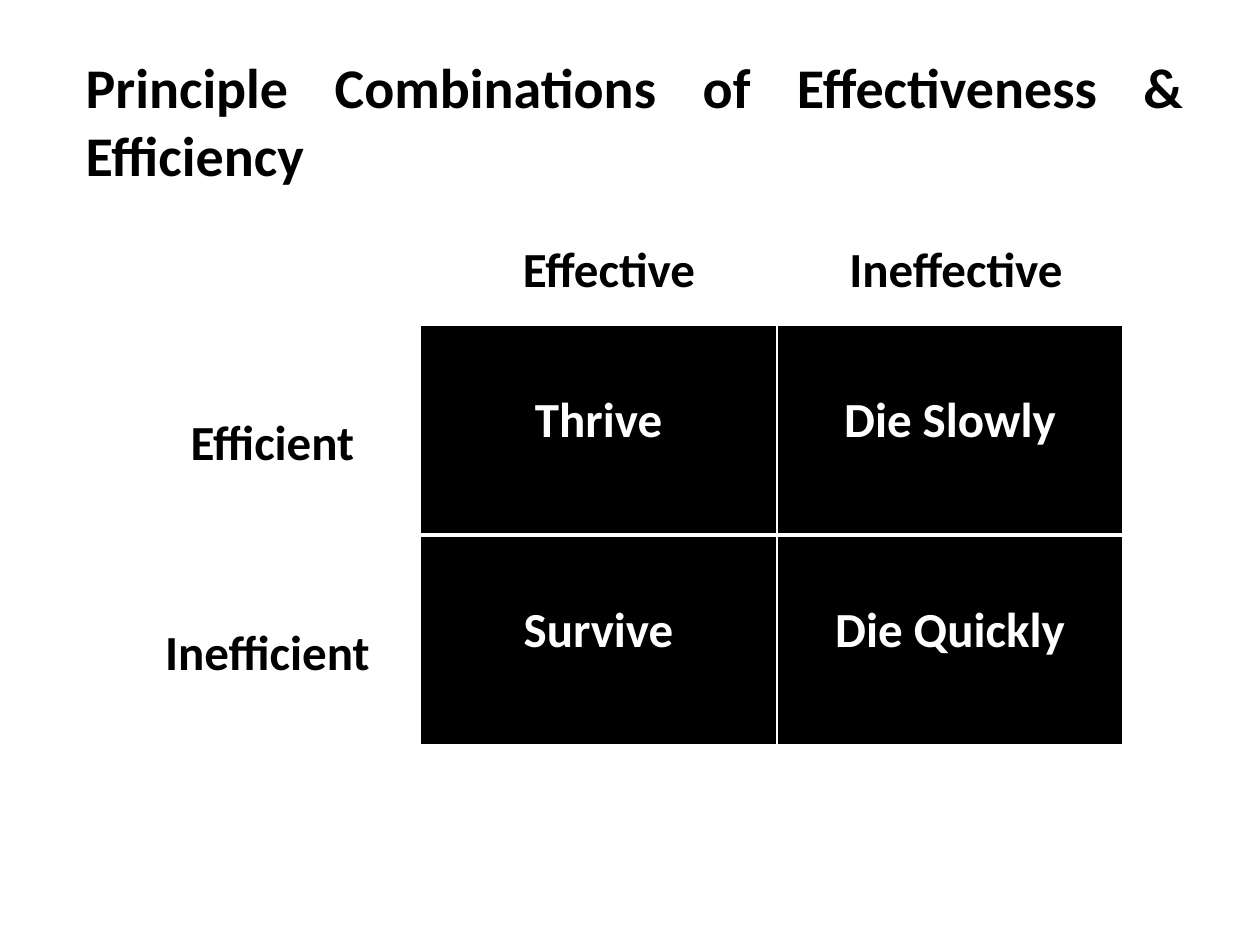
"""Build a slide with a two-by-two matrix of effectiveness and efficiency."""
from lxml.etree import SubElement
from pptx import Presentation
from pptx.dml.color import RGBColor
from pptx.enum.text import MSO_ANCHOR, PP_ALIGN
from pptx.oxml.ns import qn
from pptx.util import Emu, Pt

COLORS = {"ink": "000000", "paper": "FFFFFF"}
SCALE = 914400 / 126


def px(length):
    return Emu(round(length * SCALE))


def write(frame, text, size=28, color="ink", align=PP_ALIGN.CENTER, anchor=MSO_ANCHOR.MIDDLE):
    frame.word_wrap = True
    frame.vertical_anchor = anchor
    para = frame.paragraphs[0]
    para.alignment = align
    span = para.add_run()
    span.text = text
    span.font.name = "Calibri"
    span.font.size = Pt(size)
    span.font.bold = True
    span.font.color.rgb = RGBColor.from_string(COLORS[color])


deck = Presentation()
deck.slide_width, deck.slide_height = px(1260), px(945)
page = deck.slides.add_slide(deck.slide_layouts[5])
page.background.fill.solid()
page.background.fill.fore_color.rgb = RGBColor.from_string(COLORS["paper"])

title = page.shapes.title
title.left, title.top, title.width, title.height = px(73), px(36), px(1124), px(168)
write(title.text_frame, "Principle Combinations of Effectiveness & Efficiency",
      size=32, align=PP_ALIGN.JUSTIFY)

labels = [
    ("Effective", 462, 220, 294, 95),
    ("Ineffective", 809, 220, 294, 95),
    ("Efficient ", 147, 399, 262, 84),
    ("Inefficient ", 147, 609, 252, 84),
]
for text, left, top, width, height in labels:
    box = page.shapes.add_textbox(px(left), px(top), px(width), px(height))
    write(box.text_frame, text)

outcomes = [["Thrive", "Die Slowly"], ["Survive", "Die Quickly"]]
matrix = page.shapes.add_table(2, 2, px(420), px(325), px(703), px(420)).table
matrix.first_row = matrix.horz_banding = False
for column, width in zip(matrix.columns, (357, 346)):
    column.width = px(width)
for row, texts in enumerate(outcomes):
    matrix.rows[row].height = px(210)
    middle_edge = "lnT" if row else "lnB"
    for column, text in enumerate(texts):
        cell = matrix.cell(row, column)
        cell.margin_top = px(66)
        write(cell.text_frame, text, color="paper")
        cell.vertical_anchor = MSO_ANCHOR.TOP
        properties = cell._tc.get_or_add_tcPr()
        for edge in ("lnL", "lnR", "lnT", "lnB"):
            weight = Pt(3 if edge == middle_edge else 1)
            line = SubElement(properties, qn(f"a:{edge}"), w=str(weight))
            fill = SubElement(line, qn("a:solidFill"))
            SubElement(fill, qn("a:srgbClr"), val=COLORS["paper"])
        cell.fill.solid()
        cell.fill.fore_color.rgb = RGBColor.from_string(COLORS["ink"])

deck.save("out.pptx")
